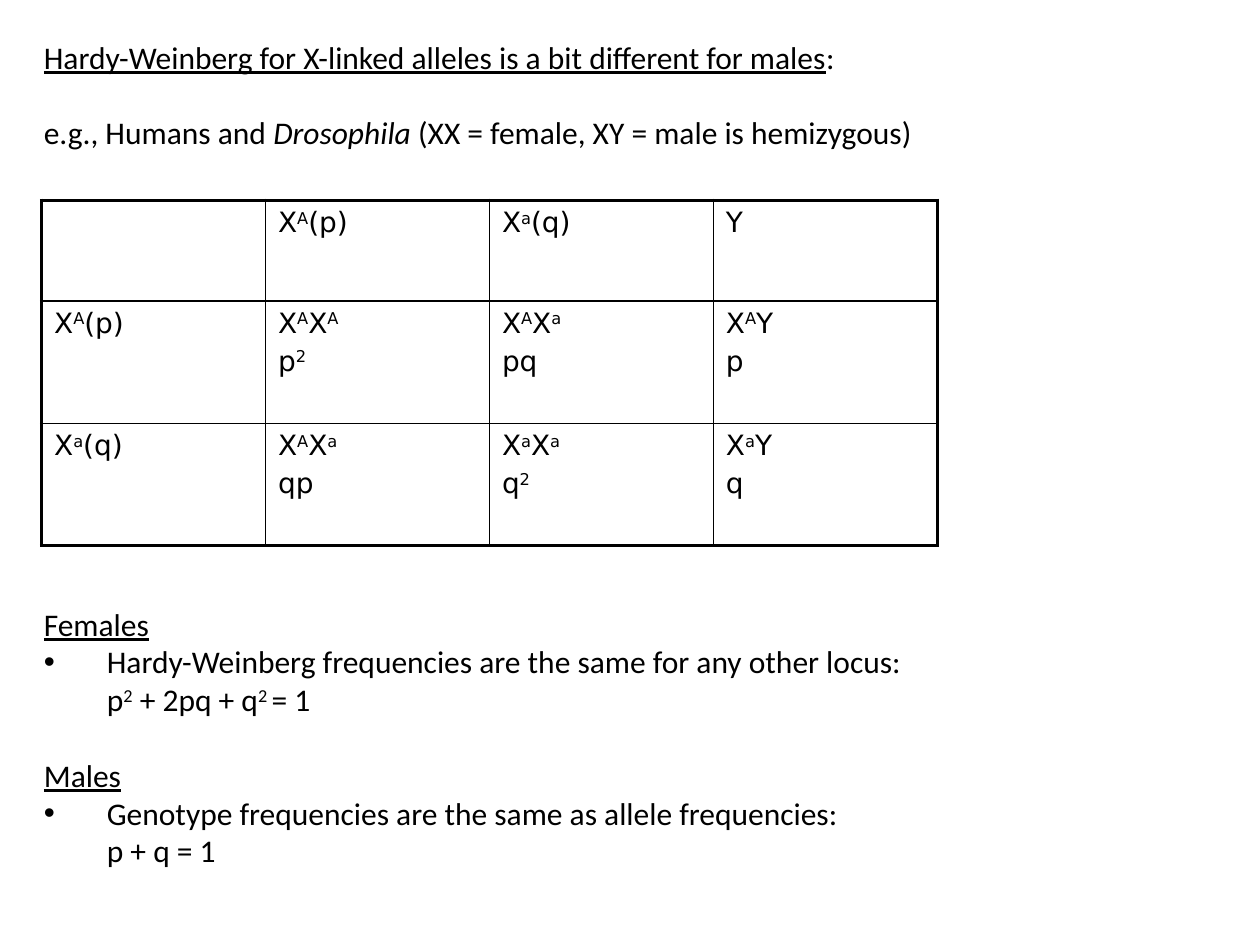
import pptx
import pptx.util
import pptx.dml.color
import pptx.enum.text
import pptx.oxml.ns
from lxml import etree
from pptx.util import Inches, Pt

INK = {"text": "000000", "line": "000000"}
BODY = {"size": Pt(18), "name": "Calibri"}
CELL = {"size": Pt(16), "name": "DejaVu Sans"}
UNDER = {"underline": True}
GAP = 21.6  # points, one line of body text

# Text between carets is superscript
GRID = [
    ["", "X^A^(p)", "X^a^(q)", "Y"],
    ["X^A^(p)", "X^A^X^A^\np^2^", "X^A^X^a^\npq", "X^A^Y\np"],
    ["X^a^(q)", "X^A^X^a^\nqp", "X^a^X^a^\nq^2^", "X^a^Y\nq"],
]
ROWS = [0.8, 0.97, 0.97]

# Space before in points, kind of line, runs with their own format
LINES = [
    (0, "plain", [("Hardy-Weinberg for X-linked alleles is a bit different for males", UNDER),
                  (":", {})]),
    (GAP, "plain", [("e.g., Humans and ", {}), ("Drosophila", {"italic": True}),
                    (" (XX = female, XY = male is hemizygous)", {})]),
    (12 * GAP, "plain", [("Females", UNDER)]),
    (0, "bullet", [("Hardy-Weinberg frequencies are the same for any other locus:", {})]),
    (0, "inset", [("p^2^ + 2pq + q^2 ^= 1", {})]),
    (GAP, "plain", [("Males", UNDER)]),
    (0, "bullet", [("Genotype frequencies are the same as allele frequencies:", {})]),
    (0, "inset", [("p + q = 1", {})]),
]


def add_sub(node, tag, **vals):
    return etree.SubElement(node, pptx.oxml.ns.qn(tag), **vals)


def add_runs(para, text, style):
    for i, part in enumerate(text.split("^")):
        if not part:
            continue
        run = para.add_run()
        run.text = part
        for key, val in style.items():
            setattr(run.font, key, val)
        run.font.color.rgb = pptx.dml.color.RGBColor.from_string(INK["text"])
        if i % 2:
            run.font._element.set("baseline", "30000")


def set_indent(para, kind):
    props = para._p.get_or_add_pPr()
    left = 0 if kind == "plain" else Inches(0.5)
    hang = -Inches(0.5) if kind == "bullet" else 0
    props.set("marL", str(left))
    props.set("indent", str(hang))
    if kind == "bullet":
        add_sub(props, "a:buFont", typeface="Arial")
        add_sub(props, "a:buChar", char="•")


def add_notes(slide):
    box = slide.shapes.add_textbox(Inches(0.25), Inches(0.25), Inches(9.5), Inches(6.77))
    frame = box.text_frame
    frame.word_wrap = True
    frame.auto_size = pptx.enum.text.MSO_AUTO_SIZE.SHAPE_TO_FIT_TEXT
    for i, (gap, kind, runs) in enumerate(LINES):
        para = frame.add_paragraph() if i else frame.paragraphs[0]
        para.space_before = Pt(gap)
        set_indent(para, kind)
        for text, extra in runs:
            add_runs(para, text, {**BODY, **extra})


def set_edges(cell, row, col):
    # Heavy lines run around the outside of the table
    heavy = {"L": col == 0, "R": col == len(GRID[0]) - 1,
             "T": row == 0, "B": row == len(GRID) - 1}
    props = cell._tc.get_or_add_tcPr()
    for i, (side, outer) in enumerate(heavy.items()):
        line = add_sub(props, f"a:ln{side}", w=str(Pt(2.25 if outer else 1)))
        add_sub(add_sub(line, "a:solidFill"), "a:srgbClr", val=INK["line"])
        props.insert(i, line)


def add_cross(slide):
    shape = slide.shapes.add_table(len(GRID), len(GRID[0]), Inches(0.33), Inches(1.59),
                                   Inches(7.11), Inches(sum(ROWS)))
    table = shape.table
    table.first_row = table.horz_banding = False
    for row, texts in enumerate(GRID):
        table.rows[row].height = Inches(ROWS[row])
        for col, text in enumerate(texts):
            cell = table.cell(row, col)
            cell.fill.background()
            set_edges(cell, row, col)
            for i, line in enumerate(text.split("\n")):
                frame = cell.text_frame
                para = frame.add_paragraph() if i else frame.paragraphs[0]
                para.space_before = Pt(3.2)
                add_runs(para, line, CELL)


def main():
    deck = pptx.Presentation()
    deck.slide_width, deck.slide_height = Inches(10), Inches(7.5)
    slide = deck.slides.add_slide(deck.slide_layouts[6])
    add_notes(slide)
    add_cross(slide)
    deck.save("out.pptx")


if __name__ == "__main__":
    main()
